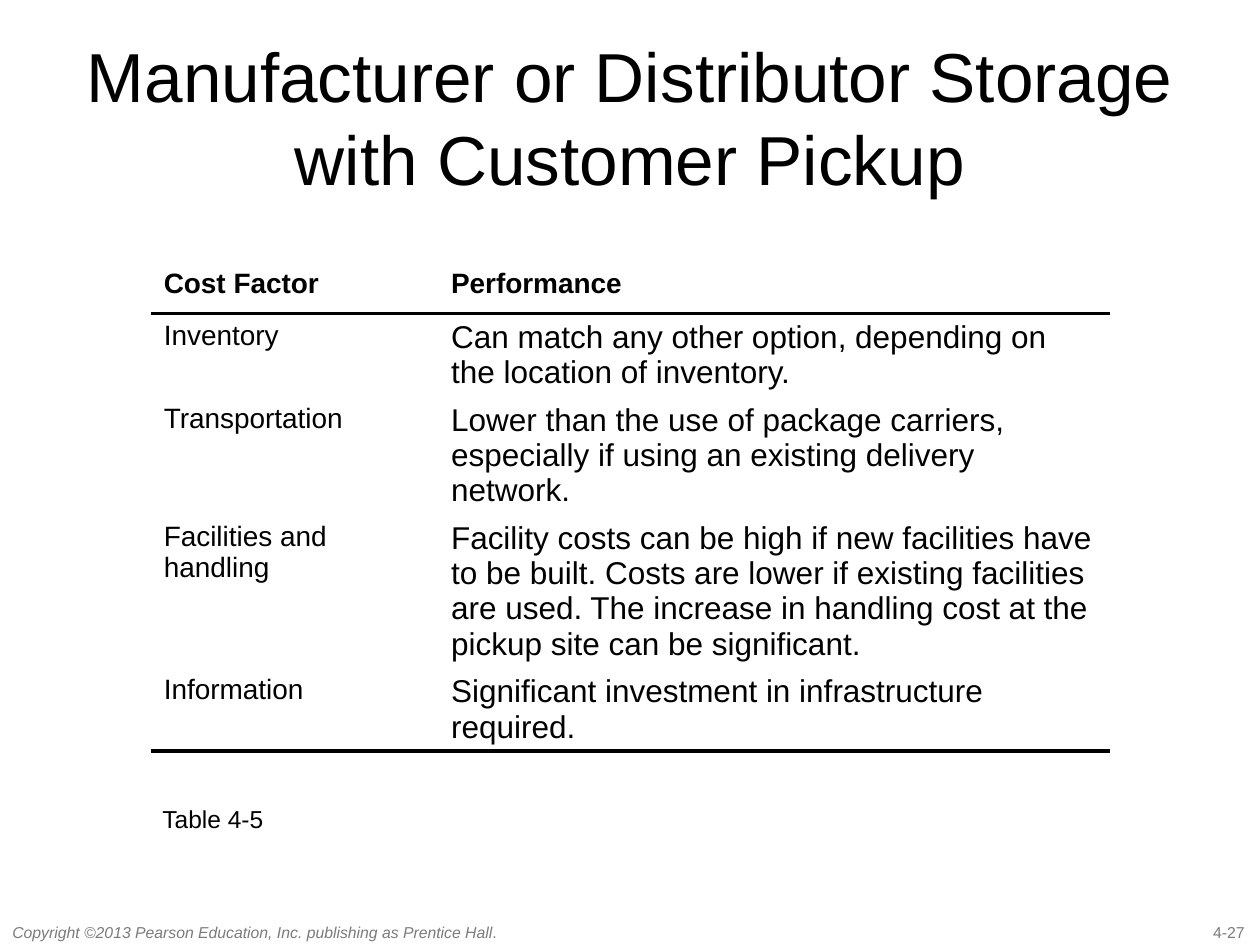
import dataclasses

import pptx
import pptx.dml.color
import pptx.enum.text
import pptx.oxml
import pptx.oxml.ns
import pptx.util
from pptx.util import Inches


@dataclasses.dataclass(frozen=True)
class Theme:
    font: str = "Arial"
    ink: str = "000000"
    muted: str = "7B7B7B"
    paper: str = "FFFFFF"
    title_size: float = 39.6
    performance_size: float = 18
    factor_size: float = 16
    caption_size: float = 14
    footer_size: float = 9
    rule_width: float = 2.25
    table_leading: float = 1.117


THEME = Theme()
TITLE = "Manufacturer or Distributor Storage with Customer Pickup"
COLUMN_WIDTHS = (2.28, 5.33)
ROW_HEIGHT = 0.41
COST_ROWS = (
    ("Cost Factor", "Performance"),
    ("Inventory", "Can match any other option, depending on the location of inventory."),
    ("Transportation", "Lower than the use of package carriers, especially if using "
     "an existing delivery network."),
    ("Facilities and handling", "Facility costs can be high if new facilities have to be "
     "built. Costs are lower if existing facilities are used. The increase in handling "
     "cost at the pickup site can be significant."),
    ("Information", "Significant investment in infrastructure required."),
)


def format_run(run, size, color=THEME.ink, bold=False, italic=False):
    run.font.name = THEME.font
    run.font.size = pptx.util.Pt(size)
    run.font.color.rgb = pptx.dml.color.RGBColor.from_string(color)
    run.font.bold = bold
    run.font.italic = italic


def set_title(slide):
    title = slide.shapes.title
    title.left, title.top = Inches(0.5), Inches(0.3)
    title.width, title.height = Inches(9), Inches(1.25)
    text_frame = title.text_frame
    text_frame.text = TITLE
    text_frame.word_wrap = True
    text_frame.auto_size = pptx.enum.text.MSO_AUTO_SIZE.NONE
    text_frame.vertical_anchor = pptx.enum.text.MSO_ANCHOR.MIDDLE
    paragraph = text_frame.paragraphs[0]
    paragraph.alignment = pptx.enum.text.PP_ALIGN.CENTER
    format_run(paragraph.runs[0], THEME.title_size)


def add_label(slide, text, left, top, width, height, size, color, italic=False):
    shape = slide.shapes.add_textbox(Inches(left), Inches(top), Inches(width), Inches(height))
    text_frame = shape.text_frame
    text_frame.text = text
    text_frame.word_wrap = False
    text_frame.auto_size = pptx.enum.text.MSO_AUTO_SIZE.SHAPE_TO_FIT_TEXT
    paragraph = text_frame.paragraphs[0]
    format_run(paragraph.runs[0], size, color, italic=italic)
    return paragraph


def set_borders(cell, ruled_sides):
    properties = cell._tc.get_or_add_tcPr()
    width = pptx.util.Pt(THEME.rule_width)
    namespace = pptx.oxml.ns.nsdecls("a")
    for side in "LRTB":
        if side in ruled_sides:
            paint = f'<a:solidFill><a:srgbClr val="{THEME.ink}"/></a:solidFill>'
        else:
            paint = "<a:noFill/>"
        properties.append(pptx.oxml.parse_xml(
            f'<a:ln{side} {namespace} w="{width}">{paint}</a:ln{side}>'))


def add_cost_table(slide):
    row_count = len(COST_ROWS)
    table = slide.shapes.add_table(
        row_count, len(COLUMN_WIDTHS), Inches(1.2), Inches(2.08),
        Inches(sum(COLUMN_WIDTHS)), Inches(ROW_HEIGHT * row_count)).table
    table.first_row = False
    table.horz_banding = False
    for column, width in zip(table.columns, COLUMN_WIDTHS):
        column.width = Inches(width)
    ruled_sides = {0: "B", 1: "T", row_count - 1: "B"}
    for row_index, texts in enumerate(COST_ROWS):
        table.rows[row_index].height = Inches(ROW_HEIGHT)
        is_header = row_index == 0
        for column_index, text in enumerate(texts):
            cell = table.cell(row_index, column_index)
            cell.text_frame.text = text
            is_factor = is_header or column_index == 0
            size = THEME.factor_size if is_factor else THEME.performance_size
            paragraph = cell.text_frame.paragraphs[0]
            paragraph.line_spacing = pptx.util.Pt(round(size * THEME.table_leading, 1))
            format_run(paragraph.runs[0], size, bold=is_header)
            set_borders(cell, ruled_sides.get(row_index, ""))
            cell.fill.background()


def add_footer(slide):
    add_label(slide, "4-27", 9.53, 7.27, 0.47, 0.25, THEME.footer_size, THEME.muted)
    paragraph = add_label(
        slide, "Copyright ©2013 Pearson Education, Inc. publishing as Prentice Hall",
        0, 7.27, 4.1, 0.25, THEME.footer_size, THEME.muted, italic=True)
    full_stop = paragraph.add_run()
    full_stop.text = "."
    format_run(full_stop, THEME.footer_size, THEME.muted)


def main():
    presentation = pptx.Presentation()
    presentation.slide_width, presentation.slide_height = Inches(10), Inches(7.5)
    slide = presentation.slides.add_slide(presentation.slide_layouts.get_by_name("Title Only"))
    background = slide.background.fill
    background.solid()
    background.fore_color.rgb = pptx.dml.color.RGBColor.from_string(THEME.paper)
    add_footer(slide)
    set_title(slide)
    add_cost_table(slide)
    add_label(slide, "Table 4-5", 1.19, 6.33, 1.01, 0.34, THEME.caption_size, THEME.ink)
    presentation.save("out.pptx")


if __name__ == "__main__":
    main()
